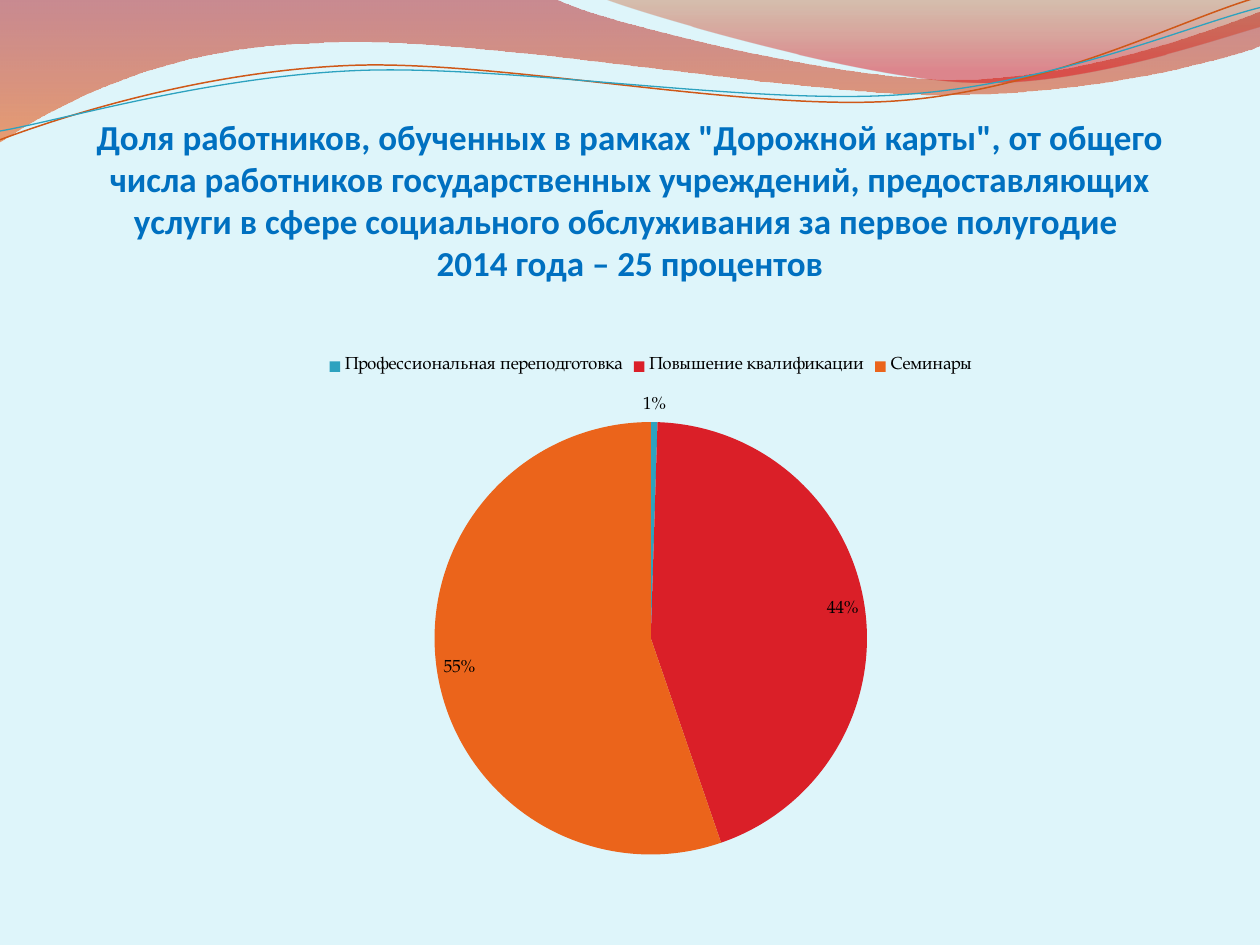
from dataclasses import dataclass
from math import cos, radians, sin
from typing import Optional

from lxml.etree import SubElement
from pptx import Presentation
from pptx.chart.data import CategoryChartData
from pptx.dml.color import RGBColor
from pptx.enum.chart import XL_CHART_TYPE, XL_LABEL_POSITION, XL_LEGEND_POSITION
from pptx.enum.text import MSO_ANCHOR, MSO_AUTO_SIZE, PP_ALIGN
from pptx.oxml.ns import qn
from pptx.util import Emu, Inches, Pt

COLUMNS, ROWS = 100, 75
UNITS_PER_COLUMN = 1000
Point = tuple[float, float]


@dataclass(frozen=True)
class GradientStop:
    position: int
    color: str
    opacity: int


@dataclass(frozen=True)
class Wave:
    start: Point
    segments: tuple[tuple[Point, ...], ...]
    gradient: tuple[GradientStop, ...] = ()
    line_color: Optional[str] = None
    line_width: float = 0
    rotation: float = 0
    center: Point = (0, 0)


WAVES = (
    Wave(
        (0, 0),
        (
            ((44, -0.1),),
            ((47.6, 1.7), (66.4, 6.3), (75.8, 6.3)),
            ((85.3, 6.3), (95.8, 2.6), (100, 0.9)),
            ((100.1, 3.6),),
            ((98.3, 4.4), (87, 7.6), (74.6, 7.5)),
            ((62.2, 7.5), (38.2, 2.8), (25.7, 3.4)),
            ((12.9, 3.6), (4.6, 8.3), (-0.1, 11.3)),
            ((0, 0),),
        ),
        gradient=(GradientStop(0, "AF0911", 45), GradientStop(100, "EE5300", 55)),
    ),
    Wave(
        (47.9, -0.1),
        (
            ((50.9, 1.1), (68.2, 6.2), (76.9, 6.5)),
            ((85.6, 6.9), (96.1, 3.2), (100, 2.1)),
            ((100, 0),),
            ((47.9, -0.1),),
        ),
        gradient=(GradientStop(0, "C24400", 30), GradientStop(80, "DC000B", 45)),
    ),
    Wave(
        (0, 11.1),
        (
            ((4.8, 9.3), (15.8, 5.7), (27.7, 5.2)),
            ((39.5, 4.7), (59.3, 8.9), (71.3, 8)),
            ((83.3, 7.1), (93.8, 1.5), (99.8, -0.2)),
        ),
        line_color="CF5818",
        line_width=0.85,
        rotation=-2.7,
        center=(49.9, 5.75),
    ),
    Wave(
        (0, 10.4),
        (
            ((4.7, 9.6), (16.4, 6.1), (28.3, 5.6)),
            ((40.3, 5.1), (59.7, 8.4), (71.7, 7.5)),
            ((83.6, 6.7), (94.1, 2.1), (100, 0.6)),
        ),
        line_color="2DA2BF",
        line_width=0.75,
        rotation=-2.7,
        center=(49.95, 5.9),
    ),
)
TITLE = (
    'Доля работников, обученных в рамках "Дорожной карты", от общего числа '
    "работников государственных учреждений, предоставляющих услуги в сфере "
    "социального обслуживания за первое полугодие \v2014 года – 25 процентов"
)
TRAINING_SHARES = {
    "Профессиональная переподготовка": (0.5, "2DA2BF"),
    "Повышение квалификации": (44, "DA1F28"),
    "Семинары": (55, "EB641B"),
}


def color(value: str) -> RGBColor:
    return RGBColor.from_string(value)


def grid_box(presentation, column: float, row: float, width: float, height: float) -> tuple[Emu, ...]:
    cell_width = presentation.slide_width / COLUMNS
    cell_height = presentation.slide_height / ROWS
    return tuple(
        Emu(round(length))
        for length in (column * cell_width, row * cell_height, width * cell_width, height * cell_height)
    )


def level_point(point: Point, wave: Wave) -> Point:
    angle = radians(-wave.rotation)
    across, down = point[0] - wave.center[0], point[1] - wave.center[1]
    return (
        (wave.center[0] + across * cos(angle) - down * sin(angle)) * UNITS_PER_COLUMN,
        (wave.center[1] + across * sin(angle) + down * cos(angle)) * UNITS_PER_COLUMN,
    )


def bend_segments(shape, wave: Wave) -> None:
    lines = iter(list(shape._element.iter(qn("a:lnTo"))))
    for segment in wave.segments:
        parts = [next(lines) for _ in segment]
        if len(parts) == 3:
            curve = parts[0].makeelement(qn("a:cubicBezTo"), {})
            parts[0].addprevious(curve)
            for part in parts:
                curve.append(part[0])
                part.getparent().remove(part)


def fill_gradient(shape, stops: tuple[GradientStop, ...]) -> None:
    shape.fill.background()
    no_fill = shape._element.spPr.find(qn("a:noFill"))
    gradient = no_fill.makeelement(qn("a:gradFill"), {"rotWithShape": "1"})
    stop_list = SubElement(gradient, qn("a:gsLst"))
    for stop in stops:
        entry = SubElement(stop_list, qn("a:gs"), pos=str(stop.position * 1000))
        tint = SubElement(entry, qn("a:srgbClr"), val=stop.color)
        SubElement(tint, qn("a:alpha"), val=str(stop.opacity * 1000))
    SubElement(gradient, qn("a:lin"), ang="5400000", scaled="0")
    no_fill.getparent().replace(no_fill, gradient)


def draw_wave(presentation, slide, wave: Wave) -> None:
    points = [level_point(point, wave) for segment in wave.segments for point in segment]
    scale = presentation.slide_width / COLUMNS / UNITS_PER_COLUMN
    builder = slide.shapes.build_freeform(*level_point(wave.start, wave), scale=scale)
    builder.add_line_segments(points, close=bool(wave.gradient))
    shape = builder.convert_to_shape()
    bend_segments(shape, wave)
    shape.rotation = wave.rotation
    shape.shadow.inherit = False
    if wave.gradient:
        fill_gradient(shape, wave.gradient)
        shape.line.fill.background()
    else:
        shape.fill.background()
        shape.line.color.rgb = color(wave.line_color)
        shape.line.width = Pt(wave.line_width)


def format_font(font, *, name: str, size: float, tone: str, bold: bool = False) -> None:
    font.name = name
    font.size = Pt(size)
    font.bold = bold
    font.color.rgb = color(tone)


def write_text(shape, text: str, *, align: PP_ALIGN, anchor: MSO_ANCHOR, **font_format) -> None:
    frame = shape.text_frame
    frame.word_wrap = True
    frame.auto_size = MSO_AUTO_SIZE.NONE
    frame.vertical_anchor = anchor
    frame.margin_left = frame.margin_right = frame.margin_bottom = 0
    frame.margin_top = Inches(0.05)
    paragraph = frame.paragraphs[0]
    paragraph.text = text
    paragraph.alignment = align
    for run in paragraph.runs:
        format_font(run.font, **font_format)


def draw_training_chart(presentation, slide) -> None:
    data = CategoryChartData()
    data.categories = list(TRAINING_SHARES)
    data.add_series("Series 1", [value for value, tone in TRAINING_SHARES.values()])
    box = grid_box(presentation, 8.3, 27.3, 86.7, 41.9)
    chart = slide.shapes.add_chart(XL_CHART_TYPE.PIE, *box, data).chart
    format_font(chart.font, name="TeX Gyre Pagella", size=10, tone="000000")
    chart.has_title = False
    chart.has_legend = True
    chart.legend.position = XL_LEGEND_POSITION.TOP
    chart.legend.include_in_layout = False
    plot = chart.plots[0]
    plot.vary_by_categories = True
    labels = plot.series[0].data_labels
    labels.show_value = False
    labels.show_percentage = True
    labels.number_format = "0%"
    labels.number_format_is_linked = False
    labels.position = XL_LABEL_POSITION.BEST_FIT
    for index, (value, tone) in enumerate(TRAINING_SHARES.values()):
        fill = plot.series[0].points[index].format.fill
        fill.solid()
        fill.fore_color.rgb = color(tone)


def main() -> None:
    presentation = Presentation()
    presentation.slide_width, presentation.slide_height = Inches(10), Inches(7.5)
    slide = presentation.slides.add_slide(presentation.slide_layouts[5])
    slide.background.fill.solid()
    slide.background.fill.fore_color.rgb = color("DEF5FA")
    for wave in WAVES:
        draw_wave(presentation, slide, wave)
    title = slide.shapes.title
    title.left, title.top, title.width, title.height = grid_box(presentation, 5, 9.9, 90, 12.6)
    write_text(title, TITLE, align=PP_ALIGN.CENTER, anchor=MSO_ANCHOR.BOTTOM,
               name="Calibri", size=20, tone="0070C0", bold=True)
    draw_training_chart(presentation, slide)
    presentation.save("out.pptx")


if __name__ == "__main__":
    main()
